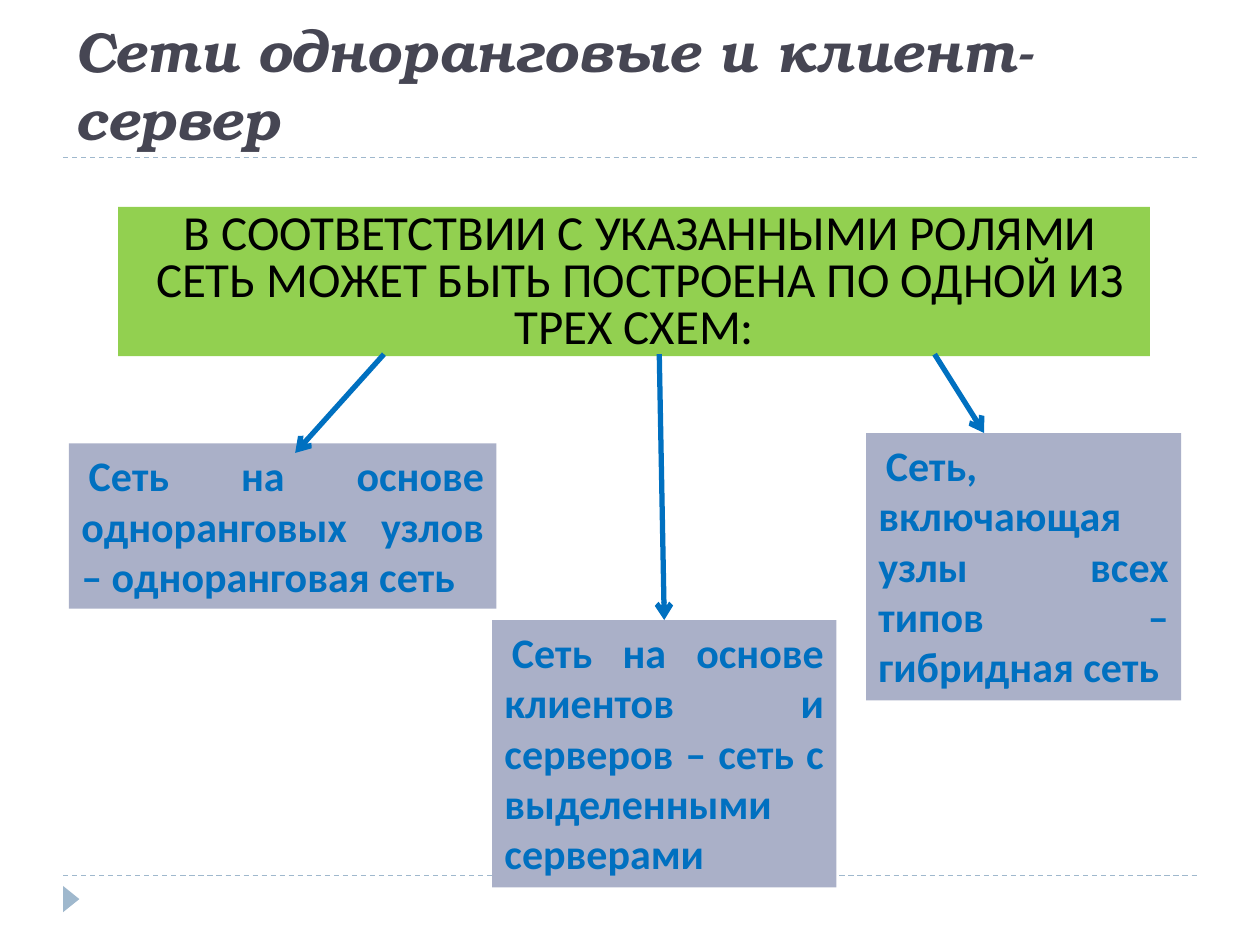
from pptx import Presentation
from pptx.dml.color import RGBColor
from pptx.enum.dml import MSO_LINE
from pptx.enum.shapes import MSO_CONNECTOR, MSO_SHAPE
from pptx.enum.text import MSO_ANCHOR, MSO_AUTO_SIZE, PP_ALIGN
from pptx.oxml import parse_xml
from pptx.oxml.ns import nsdecls, qn
from pptx.util import Cm, Pt

# Content; lengths in cm: left, top, width, height
TITLE = "Сети одноранговые и клиент-сервер"
HEADER = ("В СООТВЕТСТВИИ С УКАЗАННЫМИ РОЛЯМИ СЕТЬ МОЖЕТ БЫТЬ "
          "ПОСТРОЕНА ПО ОДНОЙ ИЗ ТРЕХ СХЕМ: ")
HEADER_AREA = (2.38, 4.17, 20.8, 3.01)
SCHEMES = [
    {"text": "Сеть на основе одноранговых узлов – одноранговая сеть",
     "area": (1.39, 8.94, 8.62, 3.33),
     "arrow": (7.74, 7.14, 5.95, 9.13), "joined": False},
    {"text": "Сеть на основе клиентов и серверов – сеть с выделенными серверами",
     "area": (9.92, 12.5, 6.94, 5.39),
     "arrow": (13.29, 7.14, 13.39, 12.5), "joined": True},
    {"text": "Сеть, включающая узлы всех типов – гибридная сеть",
     "area": (17.46, 8.73, 6.35, 5.39),
     "arrow": (18.84, 7.14, 19.84, 8.73), "joined": False},
]
RULES = [17.65, 3.18]
MARGIN, RULE_WIDTH = 1.27, 22.86

THEME = {
    "title": "464653", "rule": "9FB8CD", "header": "92D050",
    "header_text": "000000", "scheme": "AAB0C8", "accent": "0070C0",
    "title_font": "TeX Gyre Bonum", "body_font": "Calibri",
    "title_size": 32, "header_size": 28, "scheme_size": 24,
}


def color(name):
    return RGBColor.from_string(THEME[name])


def lengths(values):
    return [Cm(value) for value in values]


def set_font(para, face, size, tint, bold=False, italic=False):
    font = para.font
    font.name, font.size = THEME[face], Pt(THEME[size])
    font.bold, font.italic = bold, italic
    font.color.rgb = color(tint)


def add_filled(page, kind, area, fill):
    shape = page.shapes.add_shape(kind, *lengths(area))
    shape.shadow.inherit = False
    shape.fill.solid()
    shape.fill.fore_color.rgb = color(fill)
    shape.line.fill.background()
    return shape


def add_box(page, text, area, role, tint, align, left, indent, bold=False):
    box = add_filled(page, MSO_SHAPE.RECTANGLE, area, role)
    frame = box.text_frame
    frame.word_wrap = True
    frame.vertical_anchor = MSO_ANCHOR.TOP
    frame.text = text
    para = frame.paragraphs[0]
    para.alignment = align
    para.space_before = Pt(THEME[role + "_size"] * 0.2)
    set_font(para, "body_font", role + "_size", tint, bold)
    props = para._p.get_or_add_pPr()
    props.set("marL", str(Cm(left)))
    props.set("indent", str(Cm(indent)))
    return box


def add_line(page, ends, tint, width):
    line = page.shapes.add_connector(MSO_CONNECTOR.STRAIGHT, *lengths(ends))
    line.line.color.rgb = color(tint)
    line.line.width = Pt(width)
    line._element.spPr.append(parse_xml(f"<a:effectLst {nsdecls('a')}/>"))
    return line


def add_arrowhead(line):
    outline = line._element.spPr.find(qn("a:ln"))
    outline.append(parse_xml(f'<a:tailEnd {nsdecls("a")} type="arrow"/>'))


def main():
    deck = Presentation()
    deck.slide_width, deck.slide_height = Cm(25.4), Cm(19.05)
    page = deck.slides.add_slide(deck.slide_layouts[5])

    # Dashed rules and corner marker
    for y in RULES:
        rule = add_line(page, (MARGIN, y, MARGIN + RULE_WIDTH, y), "rule", 0.75)
        rule.line.dash_style = MSO_LINE.DASH
    marker = add_filled(page, MSO_SHAPE.ISOSCELES_TRIANGLE,
                        (1.17, 17.96, 0.53, 0.33), "rule")
    marker.rotation = 90

    # Title
    title = page.shapes.title
    title.left, title.top, title.width, title.height = lengths(
        (MARGIN, 0.43, RULE_WIDTH, 2.75))
    title.text_frame.text = TITLE
    title.text_frame.word_wrap = True
    title.text_frame.auto_size = MSO_AUTO_SIZE.NONE
    title.text_frame.vertical_anchor = MSO_ANCHOR.BOTTOM
    para = title.text_frame.paragraphs[0]
    para.alignment = PP_ALIGN.LEFT
    set_font(para, "title_font", "title_size", "title", bold=True, italic=True)

    # Header and the three schemes
    header = add_box(page, HEADER, HEADER_AREA, "header", "header_text",
                     PP_ALIGN.CENTER, 0.23, 0)
    header.text_frame.paragraphs[0].line_spacing = 0.8
    boxes = []
    for scheme in SCHEMES:
        box = add_box(page, scheme["text"], scheme["area"], "scheme", "accent",
                      PP_ALIGN.JUSTIFY, 0, 0.15, bold=True)
        box.text_frame.auto_size = MSO_AUTO_SIZE.SHAPE_TO_FIT_TEXT
        boxes.append(box)

    # Arrows from the header to the schemes
    for scheme, box in zip(SCHEMES, boxes):
        arrow = add_line(page, scheme["arrow"], "accent", 3)
        add_arrowhead(arrow)
        if scheme["joined"]:
            arrow.end_connect(box, 0)

    deck.save("out.pptx")


if __name__ == "__main__":
    main()
